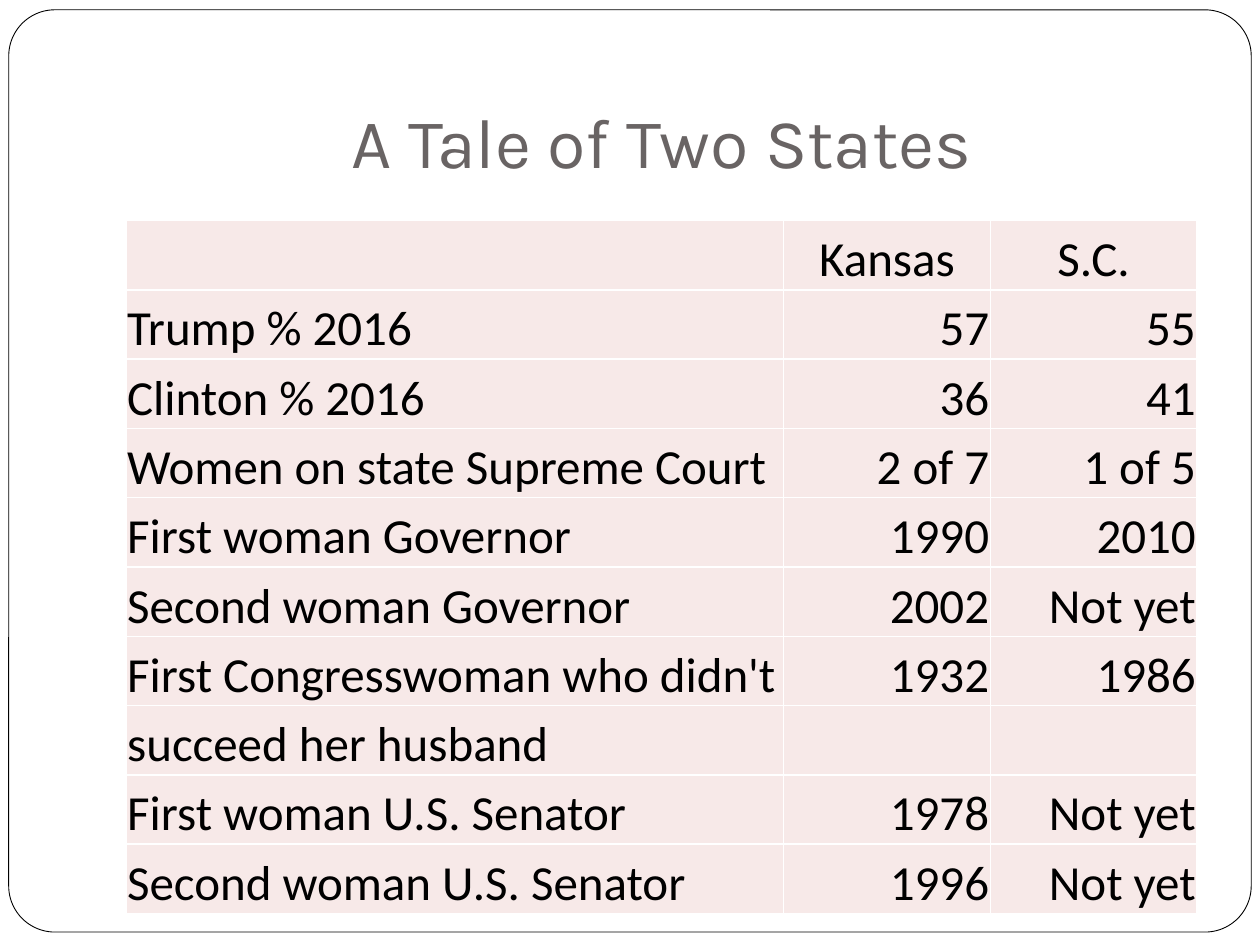
import pptx
import pptx.util
import pptx.dml.color
import pptx.enum.shapes
import pptx.enum.text
import pptx.oxml
import pptx.oxml.ns

Pt = pptx.util.Pt
RGBColor = pptx.dml.color.RGBColor
ALIGN = pptx.enum.text.PP_ALIGN
ANCHOR = pptx.enum.text.MSO_ANCHOR

WHITE = RGBColor(0xFF, 0xFF, 0xFF)
BLACK = RGBColor(0x00, 0x00, 0x00)
GREY = RGBColor(0x69, 0x64, 0x64)
PINK = RGBColor(0xF7, 0xE9, 0xE8)

ROWS = [
    ("", "Kansas", "S.C."),
    ("Trump % 2016", "57", "55"),
    ("Clinton % 2016", "36", "41"),
    ("Women on state Supreme Court", "2 of 7", "1 of 5"),
    ("First woman Governor", "1990", "2010"),
    ("Second woman Governor", "2002", "Not yet"),
    ("First Congresswoman who didn't", "1932", "1986"),
    ("succeed her husband", "", ""),
    ("First woman U.S. Senator", "1978", "Not yet"),
    ("Second woman U.S. Senator", "1996", "Not yet"),
]
COLUMN_WIDTHS = [375.8, 118.1, 118.1]


def add_borders(cell, color, width):
    properties = cell._tc.get_or_add_tcPr()
    for side in ("lnL", "lnR", "lnT", "lnB"):
        properties.append(pptx.oxml.parse_xml(
            f'<a:{side} {pptx.oxml.ns.nsdecls("a")} w="{width}">'
            f'<a:solidFill><a:srgbClr val="{color}"/></a:solidFill></a:{side}>'))


deck = pptx.Presentation()
deck.slide_width, deck.slide_height = Pt(720), Pt(540)
page = deck.slides.add_slide(deck.slide_layouts[5])

# Rounded frame, behind everything else
frame = page.shapes.add_shape(
    pptx.enum.shapes.MSO_SHAPE.ROUNDED_RECTANGLE,
    Pt(5), Pt(5.6), Pt(710), Pt(527))
frame.adjustments[0] = 0.05
frame.shadow.inherit = False
frame.fill.solid()
frame.fill.fore_color.rgb = WHITE
frame.line.color.rgb = BLACK
frame.line.width = Pt(0.5)
page.shapes._spTree.insert(2, frame._element)

# Title
title = page.shapes.title
title.left, title.top, title.width, title.height = Pt(72), Pt(21.6), Pt(612), Pt(90)
title_text = title.text_frame
title_text.text = "A Tale of Two States"
title_text.vertical_anchor = ANCHOR.BOTTOM
title_text.margin_bottom = Pt(7.2)
para = title_text.paragraphs[0]
para.alignment = ALIGN.CENTER
para.font.name = "Karla"
para.font.size = Pt(40)
para.font.color.rgb = GREY

# Comparison table
table = page.shapes.add_table(
    len(ROWS), len(COLUMN_WIDTHS), Pt(72), Pt(126), Pt(612), Pt(396)).table
table.first_row = table.horz_banding = False
for column, width in zip(table.columns, COLUMN_WIDTHS):
    column.width = Pt(width)

for row_index, row in enumerate(ROWS):
    for column_index, text in enumerate(row):
        cell = table.cell(row_index, column_index)
        add_borders(cell, WHITE, Pt(1))
        cell.fill.solid()
        cell.fill.fore_color.rgb = PINK
        cell.vertical_anchor = ANCHOR.BOTTOM
        cell.margin_left = cell.margin_right = cell.margin_top = Pt(0.7)
        cell.margin_bottom = Pt(0)
        cell.text = text
        para = cell.text_frame.paragraphs[0]
        if row_index == 0:
            para.alignment = ALIGN.CENTER
        else:
            para.alignment = ALIGN.RIGHT if column_index else ALIGN.LEFT
        para.font.name = "Calibri"
        para.font.size = Pt(28)
        para.font.color.rgb = BLACK

deck.save("out.pptx")
